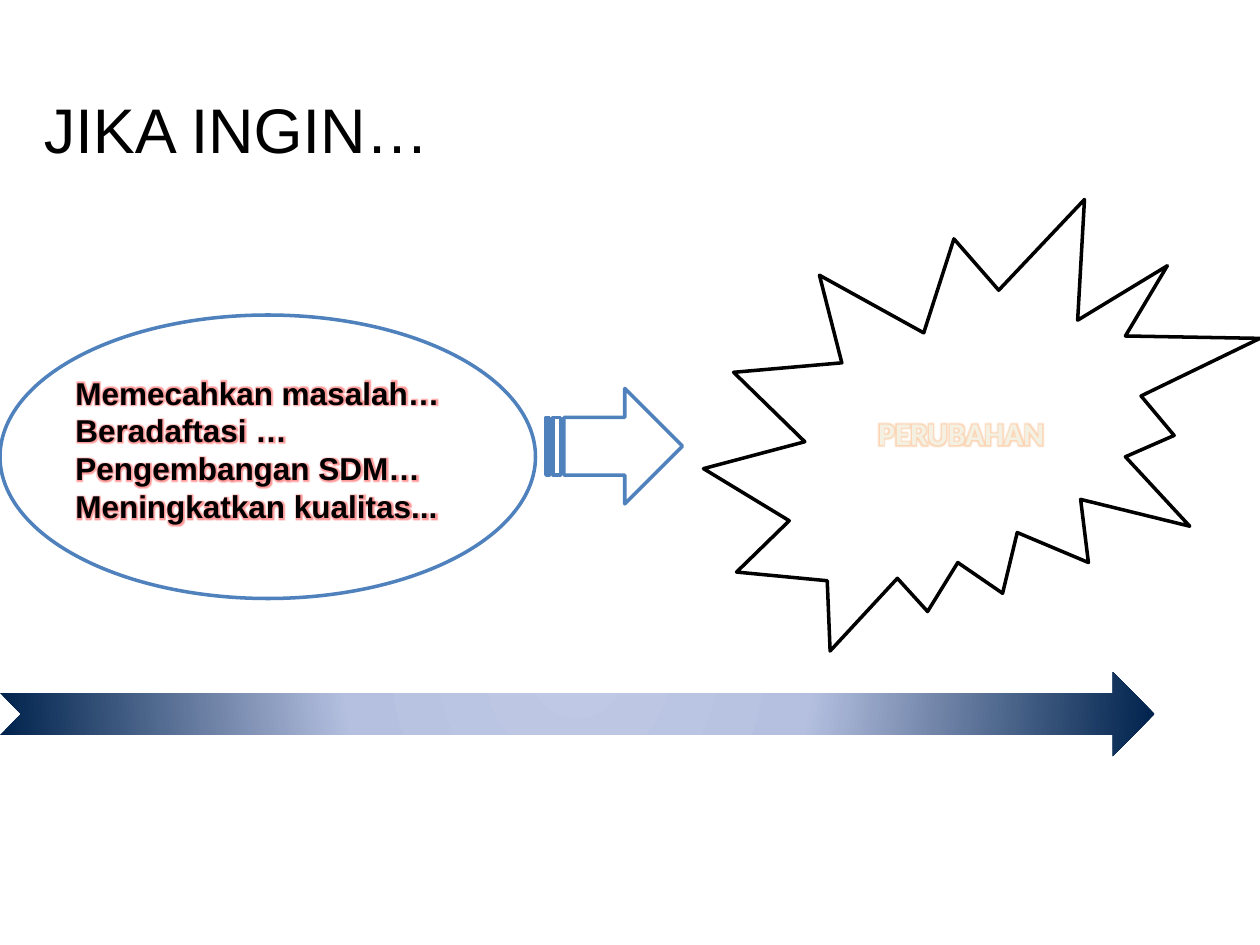
from lxml import etree
from pptx import Presentation
from pptx.dml.color import RGBColor
from pptx.enum.shapes import MSO_SHAPE
from pptx.enum.text import MSO_ANCHOR, PP_ALIGN
from pptx.oxml import parse_xml
from pptx.oxml.ns import qn
from pptx.util import Pt

OVAL = MSO_SHAPE.OVAL
BURST = MSO_SHAPE.EXPLOSION2
STRIPED_ARROW = MSO_SHAPE.STRIPED_RIGHT_ARROW
NOTCHED_ARROW = MSO_SHAPE.NOTCHED_RIGHT_ARROW
CENTER = PP_ALIGN.CENTER
MIDDLE = MSO_ANCHOR.MIDDLE

BLACK = RGBColor(0x00, 0x00, 0x00)
WHITE = RGBColor(0xFF, 0xFF, 0xFF)
BLUE = RGBColor(0x4F, 0x81, 0xBD)
DARK_BLUE = RGBColor(0x37, 0x60, 0x92)
CREAM = RGBColor(0xF4, 0xF1, 0xE3)
RED = RGBColor(0xFF, 0x00, 0x00)
ORANGE = RGBColor(0xF7, 0x96, 0x46)
BAND_STOPS = [
    (0, RGBColor(0xBF, 0xC9, 0xE5)),
    (40, RGBColor(0xB5, 0xC0, 0xE0)),
    (100, RGBColor(0x00, 0x23, 0x4D)),
]
NS = 'xmlns:a="http://schemas.openxmlformats.org/drawingml/2006/main"'


def add_outline(kind, box, line_color):
    shape = slide.shapes.add_shape(kind, *map(Pt, box))
    shape.shadow.inherit = False
    shape.fill.solid()
    shape.fill.fore_color.rgb = WHITE
    shape.line.color.rgb = line_color
    shape.line.width = Pt(2)
    return shape


def write_lines(frame, lines, font_format, color, outline=None, glow=None):
    frame.word_wrap = True
    for index, line in enumerate(lines):
        paragraph = frame.add_paragraph() if index else frame.paragraphs[0]
        run = paragraph.add_run()
        run.text = line
        for name, value in font_format.items():
            setattr(run.font, name, value)
        run.font.color.rgb = color
        if outline is None:
            continue
        text_fill = run.font.fill._xPr.find(qn("a:solidFill"))
        text_fill.addprevious(parse_xml(
            f'<a:ln {NS} w="12700"><a:solidFill><a:srgbClr val="{outline}"/></a:solidFill></a:ln>'))
        text_fill.addnext(parse_xml(
            f'<a:effectLst {NS}><a:glow rad="63500"><a:srgbClr val="{glow}">'
            '<a:alpha val="40000"/></a:srgbClr></a:glow></a:effectLst>'))


deck = Presentation()
deck.slide_width, deck.slide_height = Pt(720), Pt(540)
slide = deck.slides.add_slide(deck.slide_layouts[6])

add_outline(OVAL, (0, 180, 306, 162), BLUE)

title = slide.shapes.add_textbox(Pt(18), Pt(48), Pt(390), Pt(51))
write_lines(title.text_frame, ["JIKA INGIN…"], {"name": "Arial", "size": Pt(36)}, BLACK)

goals = slide.shapes.add_textbox(Pt(36), Pt(210), Pt(252), Pt(94.5))
write_lines(
    goals.text_frame,
    ["Memecahkan masalah…", "Beradaftasi …", "Pengembangan SDM…", "Meningkatkan kualitas..."],
    {"name": "Arial", "size": Pt(18), "bold": True}, BLACK, WHITE, RED)

change = add_outline(BURST, (402, 114, 318, 258), BLACK)
change.text_frame.vertical_anchor = MIDDLE
write_lines(
    change.text_frame, ["PERUBAHAN"],
    {"name": "Calibri", "size": Pt(18), "bold": True}, CREAM, DARK_BLUE, ORANGE)
change.text_frame.paragraphs[0].alignment = CENTER

add_outline(STRIPED_ARROW, (312, 222, 78, 66), BLUE)

band = slide.shapes.add_shape(NOTCHED_ARROW, Pt(0), Pt(384), Pt(660), Pt(48))
band.shadow.inherit = False
band.line.fill.background()
band.fill.gradient()
gradient = band.fill._xPr.find(qn("a:gradFill"))
for child in list(gradient):
    gradient.remove(child)
stops = etree.SubElement(gradient, qn("a:gsLst"))
for percent, color in BAND_STOPS:
    stop = etree.SubElement(stops, qn("a:gs"), pos=str(percent * 1000))
    etree.SubElement(stop, qn("a:srgbClr"), val=str(color))
circle = etree.SubElement(gradient, qn("a:path"), path="circle")
etree.SubElement(circle, qn("a:fillToRect"), l="50000", t="-80000", r="50000", b="180000")

deck.save("out.pptx")
